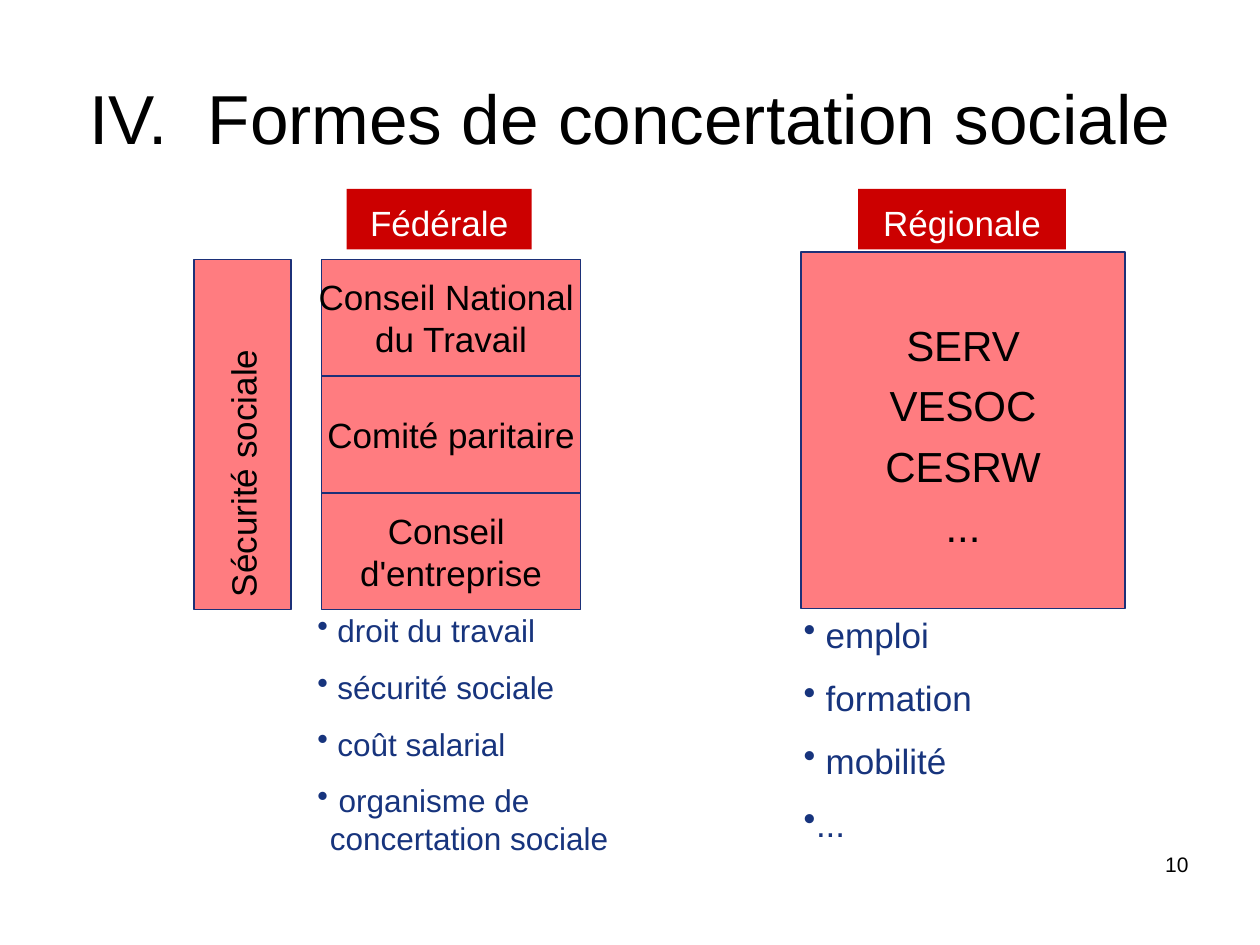
from lxml import etree
from pptx import Presentation
from pptx.dml.color import RGBColor
from pptx.enum.shapes import MSO_SHAPE
from pptx.enum.text import MSO_ANCHOR, PP_ALIGN
from pptx.oxml.ns import qn
from pptx.util import Cm, Pt

RECTANGLE = MSO_SHAPE.RECTANGLE
MIDDLE, BOTTOM = MSO_ANCHOR.MIDDLE, MSO_ANCHOR.BOTTOM
LEFT, CENTER, RIGHT = PP_ALIGN.LEFT, PP_ALIGN.CENTER, PP_ALIGN.RIGHT
FONT = "Arial"
BLACK, WHITE, RED, PINK = "000000", "FFFFFF", "CC0000", "FF7C80"
OUTLINE, BLUE = "1C3078", "17347D"


def color(value):
    return RGBColor.from_string(value)


def lengths(box):
    return [Cm(value) for value in box]


def add_text(para, text, size, ink, align):
    para.alignment = align
    for index, part in enumerate(text.split("\n")):
        if index:
            para.add_line_break()
        span = para.add_run()
        span.text = part
        span.font.name = FONT
        span.font.size = Pt(size)
        span.font.color.rgb = color(ink)


def add_bullet(para, tag, hanging, **attributes):
    properties = para._p.get_or_add_pPr()
    properties.set("marL", str(Cm(hanging)))
    properties.set("indent", str(-Cm(hanging)))
    bullet = etree.SubElement(properties, qn(tag))
    for name, value in attributes.items():
        bullet.set(name, value)


def add_panel(page, box, lines, size=20, fill=PINK, ink=BLACK, outline=OUTLINE,
              anchor=MIDDLE, align=CENTER, spacing=None):
    panel = page.shapes.add_shape(RECTANGLE, *lengths(box))
    panel.shadow.inherit = False
    panel.fill.solid()
    panel.fill.fore_color.rgb = color(fill)
    if outline:
        panel.line.color.rgb = color(outline)
        panel.line.width = Pt(0.75)
    else:
        panel.line.fill.background()
    frame = panel.text_frame
    frame.word_wrap = False
    frame.vertical_anchor = anchor
    for index, line in enumerate(lines):
        para = frame.add_paragraph() if index else frame.paragraphs[0]
        add_text(para, line, size, ink, align)
        para.line_spacing = spacing
    return panel


def add_header(page, box, text):
    add_panel(page, box, [text], fill=RED, ink=WHITE, outline=None, anchor=BOTTOM)


def add_topics(page, box, topics, size, gap):
    frame = page.shapes.add_textbox(*lengths(box)).text_frame
    frame.word_wrap = True
    frame.vertical_anchor = BOTTOM
    for index, (topic, hanging) in enumerate(topics):
        para = frame.add_paragraph() if index else frame.paragraphs[0]
        add_bullet(para, "a:buChar", hanging, char="•")
        if index:
            para.space_before = Pt(gap)
        add_text(para, topic, size, BLUE, LEFT)


def add_title(page, box, text):
    title = page.shapes.title
    title.left, title.top, title.width, title.height = lengths(box)
    frame = title.text_frame
    frame.vertical_anchor = MIDDLE
    para = frame.paragraphs[0]
    add_bullet(para, "a:buAutoNum", 2.39, type="romanUcPeriod", startAt="4")
    add_text(para, text, 39.6, BLACK, CENTER)


def add_federal(page, left, top):
    add_header(page, (left + 3.08, top, 3.73, 1.22), "Fédérale")
    body_top, body_height = top + 1.42, 7.06
    security = add_panel(page, (left, body_top, 1.96, body_height),
                         ["Sécurité sociale"], align=LEFT)
    security.text_frame._txBody.bodyPr.set("vert", "vert270")
    councils = ["Conseil National \ndu Travail", "Comité paritaire",
                "Conseil \nd'entreprise"]
    step = body_height / len(councils)
    for index, council in enumerate(councils):
        add_panel(page, (left + 2.57, body_top + index * step, 5.23, step), [council])
    topics = [(" droit du travail", 0), (" sécurité sociale", 0),
              (" coût salarial", 0), (" organisme de concertation sociale", 0.25)]
    add_topics(page, (left + 2.24, top + 8.31, 6.73, 5.28), topics, 18, 10.8)


def add_regional(page, left, top):
    add_header(page, (left + 1.15, top, 4.19, 1.22), "Régionale")
    add_panel(page, (left, top + 1.27, 6.53, 7.19),
              ["SERV", "VESOC", "CESRW\n..."], size=24, spacing=1.2)
    topics = [(" emploi", 0), (" formation", 0), (" mobilité", 0), ("...", 0)]
    add_topics(page, (left - 0.2, top + 8.66, 6.96, 4.67), topics, 20, 12)


def add_page_number(page, box, number):
    frame = page.shapes.add_textbox(*lengths(box)).text_frame
    frame.word_wrap = True
    frame.vertical_anchor = MIDDLE
    add_text(frame.paragraphs[0], number, 12, BLACK, RIGHT)


def main():
    deck = Presentation()
    deck.slide_width, deck.slide_height = Cm(25.4), Cm(19.05)
    page = deck.slides.add_slide(deck.slide_layouts.get_by_name("Title Only"))
    add_title(page, (1.27, 0.76, 22.86, 3.18), "Formes de concertation sociale")
    add_federal(page, 3.91, 3.81)
    add_regional(page, 16.15, 3.81)
    add_page_number(page, (18.29, 16.92, 5.92, 1.02), "10")
    deck.save("out.pptx")


if __name__ == "__main__":
    main()
